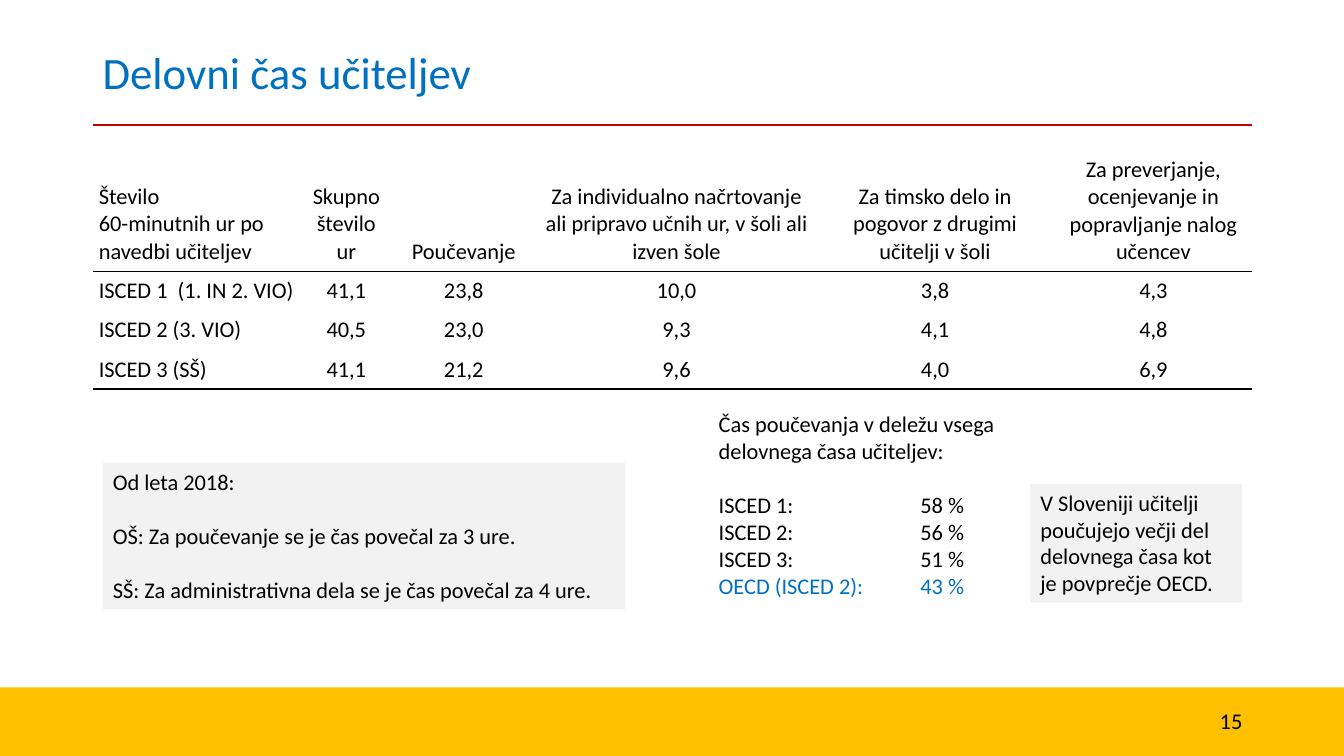
from collections import namedtuple

from lxml.etree import SubElement
from pptx import Presentation
from pptx.dml.color import RGBColor
from pptx.enum.shapes import MSO_CONNECTOR, MSO_SHAPE
from pptx.enum.text import MSO_ANCHOR, PP_ALIGN
from pptx.oxml import parse_xml
from pptx.oxml.ns import nsdecls, qn
from pptx.util import Pt

PX = 9144
FONT = "Calibri"
BODY_SIZE = 16
BLANK_LINE = 19.5
NO_GRID_STYLE = "{2D5ABB26-0587-4C30-8999-92F81FD0307C}"
COLORS = {
    "text": "000000",
    "blue": "0070C0",
    "red": "C00000",
    "gold": "FFC000",
    "panel": "F2F2F2",
}
Box = namedtuple("Box", "left top width height")

COLUMN_WIDTHS = [208, 87, 146, 276, 237, 196]
ROW_HEIGHTS = [120, 39, 39, 39]
HOURS = [
    [
        "Število\n60-minutnih ur po navedbi učiteljev",
        "Skupno število ur",
        "Poučevanje",
        "Za individualno načrtovanje ali pripravo učnih ur, v šoli ali izven šole",
        "Za timsko delo in pogovor z drugimi učitelji v šoli",
        "Za preverjanje, ocenjevanje in popravljanje nalog učencev",
    ],
    ["ISCED 1  (1. IN 2. VIO)", "41,1", "23,8", "10,0", "3,8", "4,3"],
    ["ISCED 2 (3. VIO)", "40,5", "23,0", "9,3", "4,1", "4,8"],
    ["ISCED 3 (SŠ)", "41,1", "21,2", "9,6", "4,0", "6,9"],
]
CHANGES = [
    "Od leta 2018:",
    "OŠ: Za poučevanje se je čas povečal za 3 ure.",
    "SŠ: Za administrativna dela se je čas povečal za 4 ure.",
]
SHARES_HEADING = "Čas poučevanja v deležu vsega delovnega časa učiteljev:"
SHARES = [
    ("ISCED 1:", "58 %", "text"),
    ("ISCED 2:", "56 %", "text"),
    ("ISCED 3:", "51 %", "text"),
    ("OECD (ISCED 2):", "43 %", "blue"),
]
CONCLUSION = "V Sloveniji učitelji poučujejo večji del delovnega časa kot je povprečje OECD."


def emu(box):
    """Turn a px box into EMU lengths."""
    return [length * PX for length in box]


def rgb(name):
    """Look up a named colour."""
    return RGBColor.from_string(COLORS[name])


def write(frame, lines, color="text", size=BODY_SIZE, align=PP_ALIGN.LEFT, gap=0):
    """Fill a text frame with one paragraph per line, separated by gap points."""
    frame.word_wrap = True
    for index, line in enumerate(lines):
        paragraph = frame.add_paragraph() if index else frame.paragraphs[0]
        paragraph.alignment = align
        if index and gap:
            paragraph.space_before = Pt(gap)
        add_run(paragraph, line, color, size)


def add_run(paragraph, text, color="text", size=BODY_SIZE):
    """Append one styled run to a paragraph."""
    run = paragraph.add_run()
    run.text = text
    run.font.name = FONT
    run.font.size = Pt(size)
    run.font.color.rgb = rgb(color)


def add_text(slide, box, anchor=MSO_ANCHOR.TOP):
    """Add an empty text box and return its frame."""
    frame = slide.shapes.add_textbox(*emu(box)).text_frame
    frame.word_wrap = True
    frame.vertical_anchor = anchor
    return frame


def add_panel(slide, box, fill):
    """Add a flat filled rectangle and return its frame."""
    panel = slide.shapes.add_shape(MSO_SHAPE.RECTANGLE, *emu(box))
    panel.shadow.inherit = False
    panel.fill.solid()
    panel.fill.fore_color.rgb = rgb(fill)
    panel.line.fill.background()
    panel.text_frame.vertical_anchor = MSO_ANCHOR.TOP
    return panel.text_frame


def add_footer(slide, box):
    """Draw the footer band with the slide number at its right."""
    add_panel(slide, box, "gold")
    number_box = Box(box.left + box.width - 179, box.top + 13, 88, 40)
    number = add_text(slide, number_box, MSO_ANCHOR.MIDDLE)
    write(number, ["15"], align=PP_ALIGN.RIGHT)


def add_title(slide, box):
    """Write the title and draw the rule along the bottom of the box."""
    title = add_text(slide, Box(box.left, box.top, box.width, 68), MSO_ANCHOR.MIDDLE)
    write(title, ["Delovni čas učiteljev"], "blue", 32)
    title.paragraphs[0].line_spacing = 0.9
    bottom = box.top + box.height
    ends = emu((box.left, bottom, box.left + box.width, bottom))
    rule = slide.shapes.add_connector(MSO_CONNECTOR.STRAIGHT, *ends)
    rule.line.color.rgb = rgb("red")
    rule.line.width = Pt(2)
    SubElement(rule._element.spPr, qn("a:effectLst"))


def underline_cell(cell):
    """Give a table cell a thin bottom border."""
    border = parse_xml(
        f'<a:lnB {nsdecls("a")} w="{Pt(1)}"><a:solidFill>'
        f'<a:srgbClr val="{COLORS["text"]}"/></a:solidFill></a:lnB>'
    )
    cell._tc.get_or_add_tcPr().insert(0, border)


def add_hours_table(slide, box):
    """Build the table of working hours by school level."""
    shape = slide.shapes.add_table(len(HOURS), len(COLUMN_WIDTHS), *emu(box))
    table = shape.table
    table._tbl.tblPr.find(qn("a:tableStyleId")).text = NO_GRID_STYLE
    for column, width in zip(table.columns, COLUMN_WIDTHS):
        column.width = width * PX
    for row, height in zip(table.rows, ROW_HEIGHTS):
        row.height = height * PX
    for row_index, values in enumerate(HOURS):
        for column_index, value in enumerate(values):
            cell = table.cell(row_index, column_index)
            cell.margin_left = cell.margin_right = 6 * PX
            cell.margin_top = cell.margin_bottom = 6 * PX
            cell.vertical_anchor = MSO_ANCHOR.BOTTOM
            cell.fill.background()
            align = PP_ALIGN.CENTER if column_index else PP_ALIGN.LEFT
            write(cell.text_frame, value.split("\n"), align=align)
            if row_index in (0, len(HOURS) - 1):
                underline_cell(cell)


def add_shares(slide, box):
    """List the share of teaching time, with the values at a tab stop."""
    shares = add_text(slide, box)
    write(shares, [SHARES_HEADING])
    for index, (level, share, color) in enumerate(SHARES):
        paragraph = shares.add_paragraph()
        tabs = SubElement(paragraph._p.get_or_add_pPr(), qn("a:tabLst"))
        SubElement(tabs, qn("a:tab"), pos=str(200 * PX), algn="l")
        if index == 0:
            paragraph.space_before = Pt(BLANK_LINE)
        add_run(paragraph, f"{level}\t{share}", color)


def add_note(slide, box, lines):
    """Add a grey note whose lines stand one blank line apart."""
    write(add_panel(slide, box, "panel"), lines, gap=BLANK_LINE)


def main():
    """Build and save the slide."""
    deck = Presentation()
    deck.slide_width, deck.slide_height = 1333 * PX, 750 * PX
    slide = deck.slides.add_slide(deck.slide_layouts[6])
    add_footer(slide, Box(0, 682, 1333, 68))
    add_title(slide, Box(92, 40, 1150, 84))
    add_hours_table(slide, Box(92, 149, sum(COLUMN_WIDTHS), sum(ROW_HEIGHTS)))
    add_note(slide, Box(102, 459, 518, 145), CHANGES)
    add_shares(slide, Box(703, 402, 348, 202))
    add_note(slide, Box(1022, 480, 210, 118), [CONCLUSION])
    deck.save("out.pptx")


if __name__ == "__main__":
    main()
